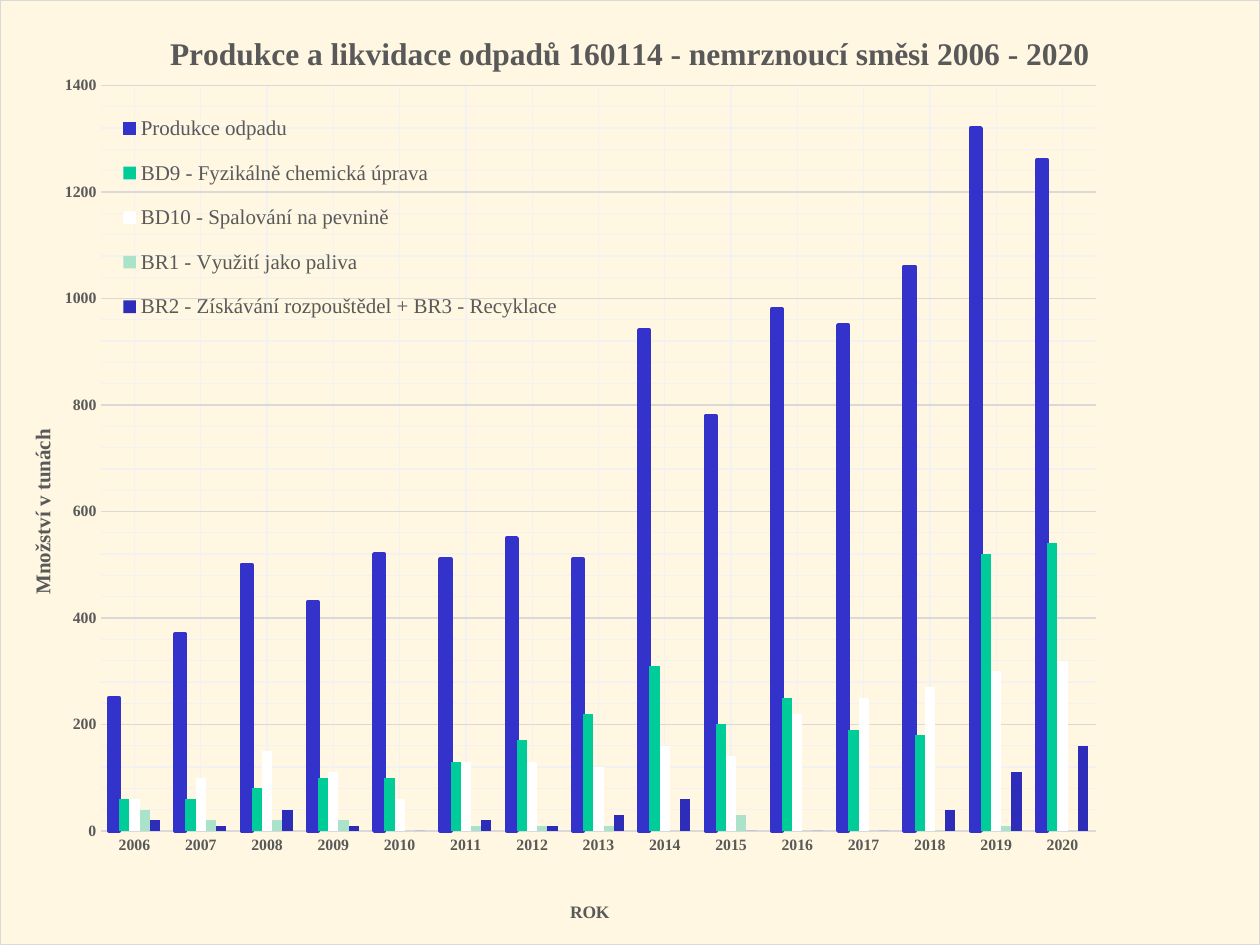
from dataclasses import dataclass
from typing import Any, Optional

from lxml import etree
from pptx import Presentation
from pptx.chart.data import CategoryChartData
from pptx.dml.color import RGBColor
from pptx.enum.chart import XL_CHART_TYPE, XL_LEGEND_POSITION, XL_TICK_MARK
from pptx.oxml.ns import nsdecls, qn
from pptx.util import Inches, Pt

CLUSTERED = XL_CHART_TYPE.COLUMN_CLUSTERED
LEGEND_RIGHT = XL_LEGEND_POSITION.RIGHT
NO_TICK = XL_TICK_MARK.NONE
BLANK_LAYOUT = 6


@dataclass(frozen=True)
class Theme:
    font: str = "Times New Roman"
    background: str = "FFF7E1"
    text: str = "595959"
    major_line: str = "D9D9D9"
    minor_line: str = "F2F2F2"
    thin: float = 0.75
    outline: float = 2.25
    title_size: int = 18
    label_size: int = 12
    small_size: int = 10
    tick_size: int = 9


@dataclass(frozen=True)
class Area:
    left: float
    top: float
    width: Optional[float] = None
    height: Optional[float] = None


@dataclass(frozen=True)
class WasteSeries:
    name: str
    color: str
    tonnes: tuple[int, ...]
    outlined: bool = False


THEME = Theme()
YEARS = [str(year) for year in range(2006, 2021)]
WASTE = [
    WasteSeries("Produkce odpadu", "3333CC",
                (250, 370, 500, 430, 520, 510, 550, 510, 940, 780, 980, 950, 1060, 1320, 1260),
                outlined=True),
    WasteSeries("BD9 - Fyzikálně chemická úprava", "00CC99",
                (60, 60, 80, 100, 100, 130, 170, 220, 310, 200, 250, 190, 180, 520, 540)),
    WasteSeries("BD10 - Spalování na pevnině", "FFFFFF",
                (60, 100, 150, 110, 60, 130, 130, 120, 160, 140, 220, 250, 270, 300, 320)),
    WasteSeries("BR1 - Využití jako paliva", "AAE2CA",
                (40, 20, 20, 20, 0, 10, 10, 10, 0, 30, 0, 0, 0, 10, 0)),
    WasteSeries("BR2 - Získávání rozpouštědel + BR3 - Recyklace", "2D2DB9",
                (20, 10, 40, 10, 0, 20, 10, 30, 60, 0, 0, 0, 40, 110, 160)),
]


def style_font(font: Any, *, size: int, bold: bool = False) -> None:
    font.name = THEME.font
    font.size = Pt(size)
    font.bold = bold
    font.color.rgb = RGBColor.from_string(THEME.text)


def style_line(line: Any, *, color: str, width: float = THEME.thin) -> None:
    line.color.rgb = RGBColor.from_string(color)
    line.width = Pt(width)


def shape_properties(*, line: str, fill: Optional[str] = None) -> Any:
    properties = etree.fromstring(f'<c:spPr {nsdecls("c", "a")}/>')
    outline = etree.Element(qn("a:ln"), w=str(Pt(THEME.thin)))
    parts = [(outline, line)] if fill is None else [(properties, fill), (outline, line)]
    for parent, color in parts:
        solid = etree.SubElement(parent, qn("a:solidFill"))
        etree.SubElement(solid, qn("a:srgbClr")).set("val", color)
    properties.append(outline)
    return properties


def place(element: Any, area: Area, *, after: Optional[str] = None, inner: bool = False) -> None:
    for previous in element.findall(qn("c:layout")):
        element.remove(previous)
    layout = etree.Element(qn("c:layout"))
    manual = etree.SubElement(layout, qn("c:manualLayout"))
    settings = [("layoutTarget", "inner")] if inner else []
    settings += [("xMode", "edge"), ("yMode", "edge"), ("x", area.left), ("y", area.top)]
    if area.width is not None:
        settings += [("w", area.width), ("h", area.height)]
    for name, value in settings:
        etree.SubElement(manual, qn(f"c:{name}")).set("val", str(value))
    if after is None:
        element.insert(0, layout)
    else:
        element.find(qn(after)).addnext(layout)


def write_title(title: Any, text: str, *, size: int, area: Area, rotation: int = 0) -> None:
    paragraph = title.text_frame.paragraphs[0]
    span = paragraph.add_run()
    span.text = text
    style_font(span.font, size=size, bold=True)
    body = title.element.find(".//" + qn("a:bodyPr"))
    body.set("rot", str(rotation * 60000))
    body.set("vert", "horz")
    place(title.element, area, after="c:tx")


def style_axis(axis: Any, title: str, *, size: int, area: Area, rotation: int = 0) -> None:
    axis.major_tick_mark = NO_TICK
    axis.minor_tick_mark = NO_TICK
    axis.has_minor_gridlines = True
    style_font(axis.tick_labels.font, size=THEME.tick_size, bold=True)
    write_title(axis.axis_title, title, size=size, area=area, rotation=rotation)


def style_series(plot: Any) -> None:
    plot.gap_width = 150
    plot.overlap = 0
    plot.vary_by_categories = False
    for series, waste in zip(plot.series, WASTE):
        series.format.fill.solid()
        series.format.fill.fore_color.rgb = RGBColor.from_string(waste.color)
        if waste.outlined:
            style_line(series.format.line, color=waste.color, width=THEME.outline)
        else:
            series.format.line.fill.background()


def style_axes(chart: Any) -> None:
    years = chart.category_axis
    style_axis(years, "ROK", size=THEME.small_size, area=Area(0.45, 0.95))
    years.has_major_gridlines = False
    style_line(years.format.line, color=THEME.major_line)

    tonnes = chart.value_axis
    style_axis(tonnes, "Množství v tunách", size=THEME.label_size,
               area=Area(0.02, 0.45), rotation=-90)
    tonnes.minimum_scale = 0
    tonnes.maximum_scale = 1400
    tonnes.major_unit = 200
    tonnes.minor_unit = 40
    tonnes.has_major_gridlines = True
    style_line(tonnes.major_gridlines.format.line, color=THEME.major_line)
    tonnes.format.line.fill.background()

    for gridlines in chart.element.findall(".//" + qn("c:minorGridlines")):
        gridlines.append(shape_properties(line=THEME.minor_line))


def add_waste_chart(page: Any, width: int, height: int) -> None:
    data = CategoryChartData(number_format="General")
    data.categories = YEARS
    for waste in WASTE:
        data.add_series(waste.name, waste.tonnes)
    chart = page.shapes.add_chart(CLUSTERED, 0, 0, width, height, data).chart
    style_font(chart.font, size=THEME.small_size)
    chart.element.find(qn("c:chart")).addnext(
        shape_properties(line=THEME.major_line, fill=THEME.background))

    chart.has_title = True
    write_title(chart.chart_title,
                "Produkce a likvidace odpadů 160114 - nemrznoucí směsi 2006 - 2020",
                size=THEME.title_size, area=Area(0.13, 0.03))
    style_series(chart.plots[0])
    style_axes(chart)

    chart.has_legend = True
    chart.legend.position = LEGEND_RIGHT
    chart.legend.include_in_layout = False
    style_font(chart.legend.font, size=THEME.label_size)
    place(chart.element.find(".//" + qn("c:legend")), Area(0.08, 0.1, 0.38, 0.26),
          after="c:legendPos")
    place(chart.element.find(".//" + qn("c:plotArea")), Area(0.08, 0.09, 0.79, 0.79), inner=True)


def main() -> None:
    deck = Presentation()
    deck.slide_width = Inches(10)
    deck.slide_height = Inches(7.5)
    page = deck.slides.add_slide(deck.slide_layouts[BLANK_LAYOUT])
    add_waste_chart(page, deck.slide_width, deck.slide_height)
    deck.save("out.pptx")


if __name__ == "__main__":
    main()
